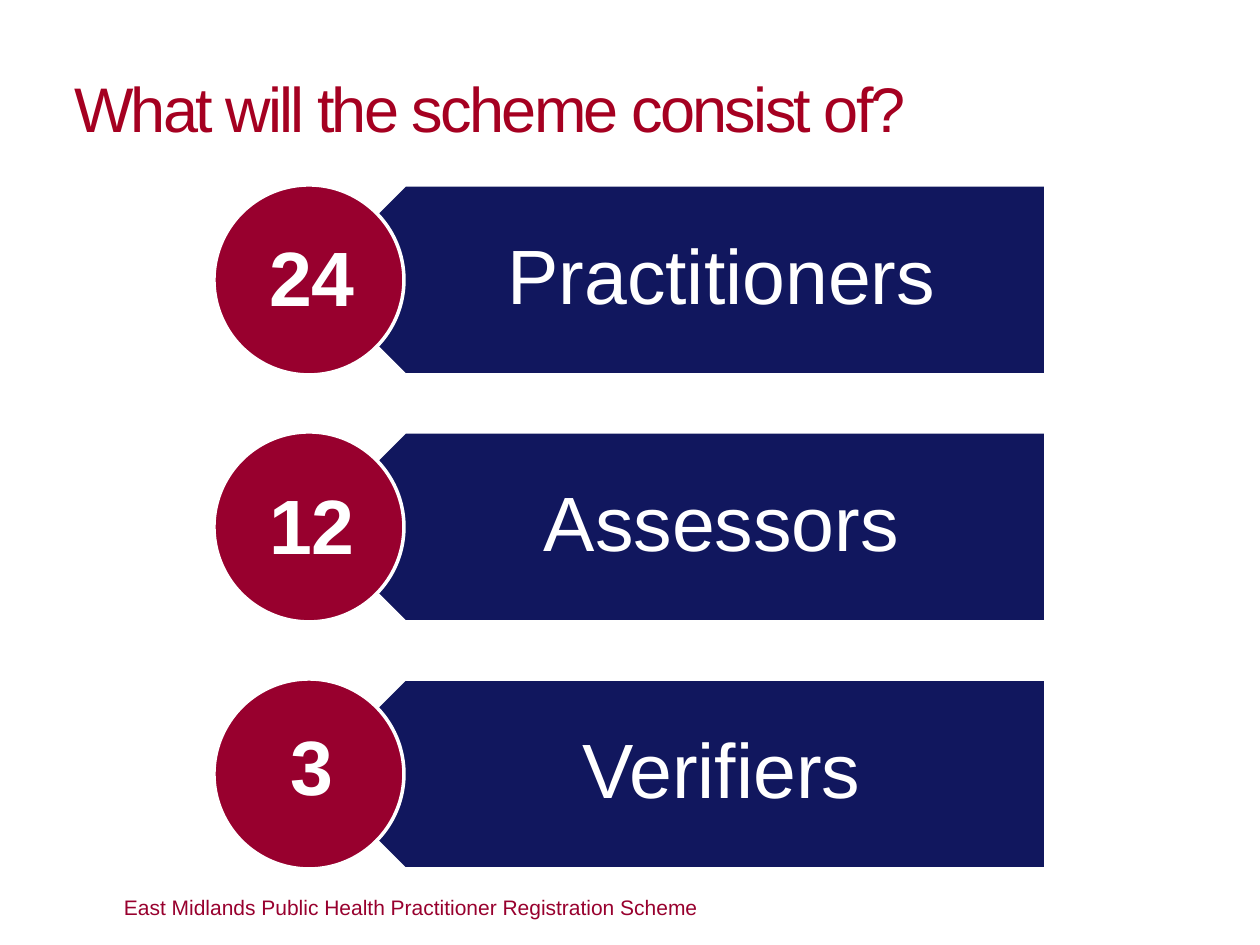
from pptx import Presentation, util as u
from pptx.dml.color import RGBColor
from pptx.enum import shapes, text

PX = 914400 // 126
COLORS = {"title": "A50021", "bar": "11175E", "disc": "98002E", "white": "FFFFFF"}
# Count, role, offset of the count from the top of its row
ROWS = [("24", "Practitioners", 39), ("12", "Assessors", 40), ("3", "Verifiers", 34)]
TOP, PITCH, SIZE = 185, 247, 190


def px(*vals):
    return [u.Emu(v * PX) for v in vals]


def rgb(name):
    return RGBColor.from_string(COLORS[name])


def write(shape, words, size, color, align, anchor, pads, bold=False):
    frame = shape.text_frame
    frame.word_wrap = True
    frame.auto_size = text.MSO_AUTO_SIZE.NONE
    frame.vertical_anchor = anchor
    (frame.margin_left, frame.margin_top,
     frame.margin_right, frame.margin_bottom) = px(*pads)
    para = frame.paragraphs[0]
    para.text = words
    para.alignment = align
    font = para.font
    font.name, font.size, font.bold = "Arial", u.Pt(size), bold
    font.color.rgb = rgb(color)
    return para


def add_title(slide, words):
    title = slide.shapes.title
    title.left, title.top, title.width, title.height = px(74, 66, 1106, 79)
    para = write(title, words, 36, "title", text.PP_ALIGN.LEFT,
                 text.MSO_ANCHOR.BOTTOM, (0, 0, 0, 0))
    # Tight letter spacing
    para.runs[0].font._element.set("spc", "-150")


def add_form(slide, kind, box, color):
    form = slide.shapes.add_shape(kind, *px(*box))
    form.shadow.inherit = False
    form.fill.solid()
    form.fill.fore_color.rgb = rgb(color)
    form.line.color.rgb = rgb("white")
    form.line.width = u.Pt(2)
    return form


def add_label(slide, box, *style, **more):
    return write(slide.shapes.add_textbox(*px(*box)), *style, **more)


def add_row(slide, top, count, role, shift):
    mid, center = text.MSO_ANCHOR.MIDDLE, text.PP_ALIGN.CENTER
    # Bar pointing left, with the role on it
    bar = add_form(slide, shapes.MSO_SHAPE.PENTAGON, (310, top, 736, SIZE), "bar")
    bar.rotation = 180
    para = add_label(slide, (357, top, 688, SIZE), role, 44, "white",
                     center, mid, (84, 23, 43, 23))
    para.line_spacing = 0.9
    # Disc with the count
    add_form(slide, shapes.MSO_SHAPE.OVAL, (214, top, SIZE, SIZE), "disc")
    add_label(slide, (253, top + shift, 118, 106), count, 44, "white", center,
              text.MSO_ANCHOR.TOP, (13, 6, 13, 6), bold=True)


def main():
    deck = Presentation()
    deck.slide_width, deck.slide_height = px(1260, 945)
    slide = deck.slides.add_slide(deck.slide_layouts[5])
    add_title(slide, "What will the scheme consist of?")
    for i, row in enumerate(ROWS):
        add_row(slide, TOP + i * PITCH, *row)
    # Footer
    add_label(slide, (124, 869, 1062, 76),
              "East Midlands Public Health Practitioner Registration Scheme",
              12, "disc", text.PP_ALIGN.LEFT, text.MSO_ANCHOR.MIDDLE, (0, 0, 0, 0))
    deck.save("out.pptx")


if __name__ == "__main__":
    main()
